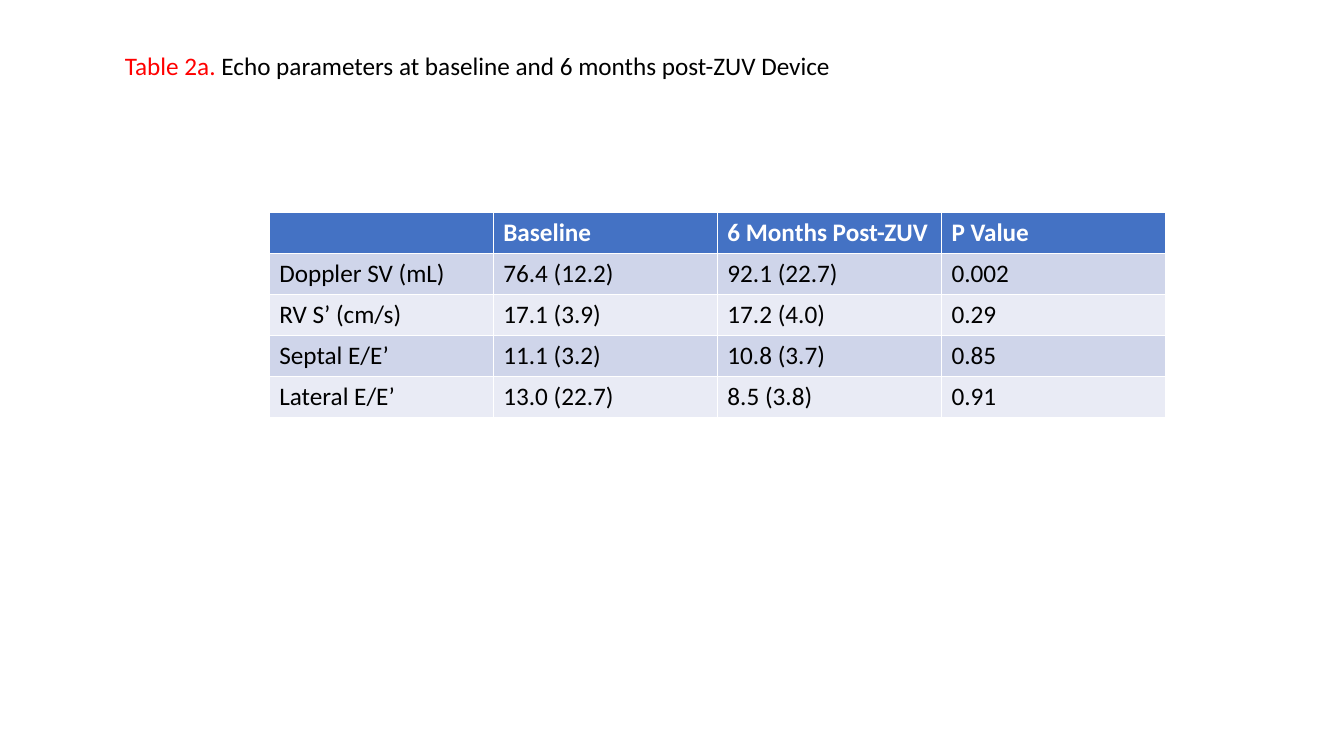
from pptx import Presentation
from pptx.dml.color import RGBColor
from pptx.util import Inches, Pt

WHITE = RGBColor(0xFF, 0xFF, 0xFF)
BLACK = RGBColor(0, 0, 0)
RED = RGBColor(0xFF, 0, 0)
HEADER_BLUE = RGBColor(0x44, 0x72, 0xC4)
BANDS = [RGBColor(0xCF, 0xD5, 0xEA), RGBColor(0xE9, 0xEB, 0xF5)]

ECHO_ROWS = [
    ("", "Baseline", "6 Months Post-ZUV", "P Value"),
    ("Doppler SV (mL)", "76.4 (12.2)", "92.1 (22.7)", "0.002"),
    ("RV S’ (cm/s)", "17.1 (3.9)", "17.2 (4.0)", "0.29"),
    ("Septal E/E’", "11.1 (3.2)", "10.8 (3.7)", "0.85"),
    ("Lateral E/E’", "13.0 (22.7)", "8.5 (3.8)", "0.91"),
]


def add_text(paragraph, text, color=BLACK, bold=False, size=18, name="Calibri"):
    run = paragraph.add_run()
    run.text = text
    font = run.font
    font.name, font.size, font.bold = name, Pt(size), bold
    font.color.rgb = color


def add_caption(slide, left, top, width, height):
    frame = slide.shapes.add_textbox(left, top, width, height).text_frame
    frame.word_wrap = True
    paragraph = frame.paragraphs[0]
    add_text(paragraph, "Table 2a. ", color=RED)
    add_text(paragraph, "Echo parameters at baseline and 6 months post-ZUV Device")


def add_echo_table(slide, left, top, width, height):
    """Fill the box with equal rows and columns; the table style draws the white rules."""
    table = slide.shapes.add_table(
        len(ECHO_ROWS), len(ECHO_ROWS[0]), left, top, width, height).table
    for row_index, values in enumerate(ECHO_ROWS):
        header = row_index == 0
        for column_index, value in enumerate(values):
            cell = table.cell(row_index, column_index)
            cell.fill.solid()
            cell.fill.fore_color.rgb = HEADER_BLUE if header else BANDS[(row_index - 1) % 2]
            if value:
                add_text(cell.text_frame.paragraphs[0], value,
                         color=WHITE if header else BLACK, bold=header)


def main():
    presentation = Presentation()
    presentation.slide_width, presentation.slide_height = Inches(13.33), Inches(7.5)
    slide = presentation.slides.add_slide(presentation.slide_layouts[6])
    add_caption(slide, Inches(1.14), Inches(0.45), Inches(8.02), Inches(0.4))
    add_echo_table(slide, Inches(2.67), Inches(2.11), Inches(8.89), Inches(2.03))
    presentation.save("out.pptx")


if __name__ == "__main__":
    main()
